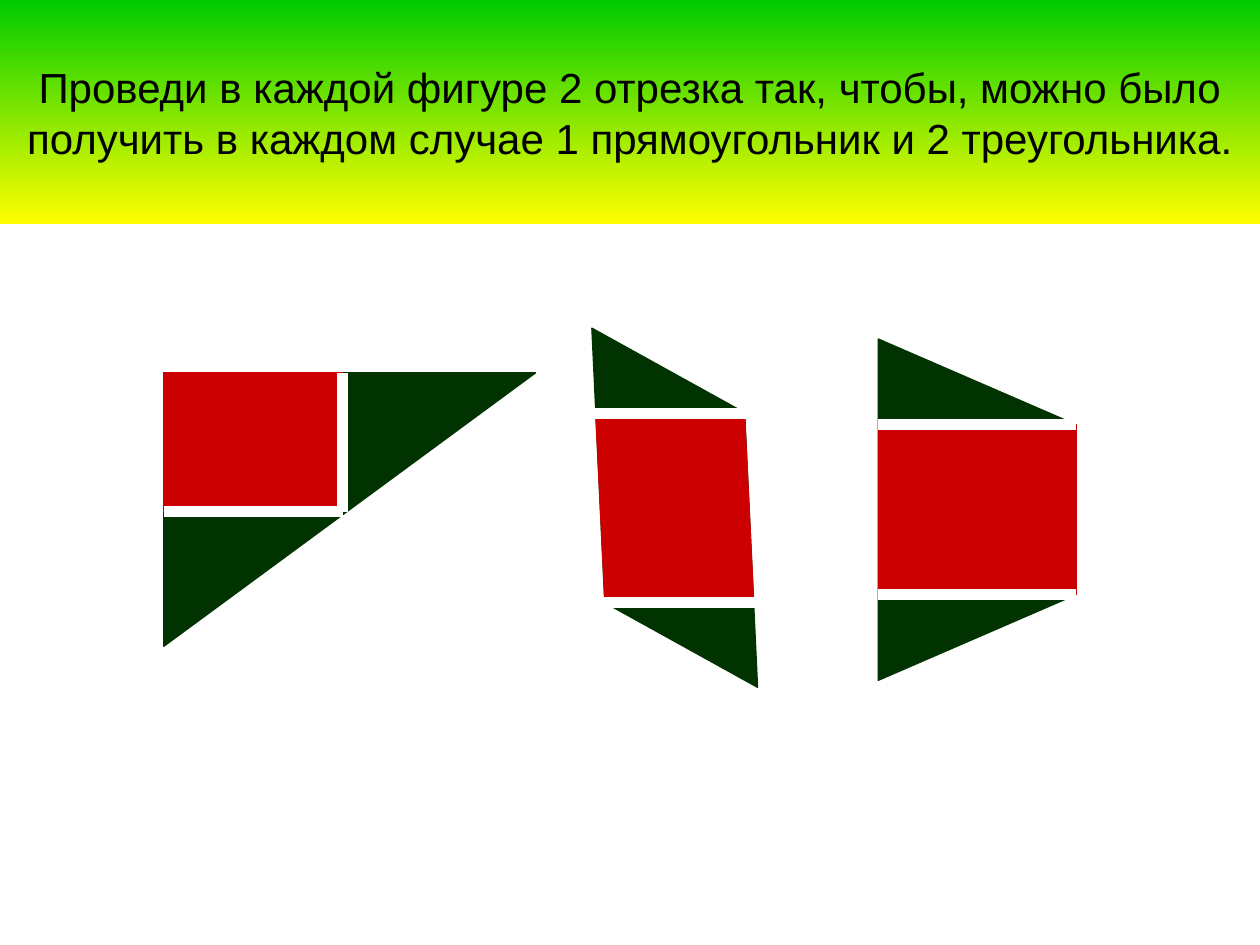
import pptx
import pptx.dml.color
import pptx.enum.shapes
import pptx.enum.text
import pptx.oxml
import pptx.oxml.ns
import pptx.util

Inches = pptx.util.Inches
Pt = pptx.util.Pt
RGBColor = pptx.dml.color.RGBColor
MSO_SHAPE = pptx.enum.shapes.MSO_SHAPE

GREEN = RGBColor(0x00, 0x33, 0x00)
RED = RGBColor(0xCC, 0x00, 0x00)
WHITE = RGBColor(0xFF, 0xFF, 0xFF)
BLACK = RGBColor(0x00, 0x00, 0x00)
BAND_TOP = RGBColor(0x00, 0xCC, 0x00)
BAND_BOTTOM = RGBColor(0xFF, 0xFF, 0x00)

TASK = ("Проведи в каждой фигуре 2 отрезка так, чтобы, можно было "
        "получить в каждом случае 1 прямоугольник и 2 треугольника.")


def paint(shape, color):
    shape.shadow.inherit = False
    shape.fill.solid()
    shape.fill.fore_color.rgb = color
    shape.line.color.rgb = color
    shape.line.width = Pt(0.75)


def add_figure(slide, preset, center, size, color, rotation=0):
    """Add a preset shape around its centre, sized as before rotation."""
    (x, y), (width, height) = center, size
    shape = slide.shapes.add_shape(
        preset, Inches(x - width / 2), Inches(y - height / 2),
        Inches(width), Inches(height))
    shape.rotation = rotation
    paint(shape, color)
    return shape


def add_cut(slide, start, end):
    """Draw the white segment that divides a figure."""
    cut = slide.shapes.add_connector(
        pptx.enum.shapes.MSO_CONNECTOR.STRAIGHT,
        *(Inches(value) for value in (*start, *end)))
    cut.line.color.rgb = WHITE
    cut.line.width = Pt(6)
    cut._element.spPr.append(pptx.oxml.parse_xml(
        "<a:effectLst %s/>" % pptx.oxml.ns.nsdecls("a")))


def add_title_band(slide, left, top, width, height):
    title = slide.shapes.title
    title.left, title.top = Inches(left), Inches(top)
    title.width, title.height = Inches(width), Inches(height)
    title.fill.gradient()
    title.fill.gradient_angle = 270
    for stop, color, position in zip(
            title.fill.gradient_stops, (BAND_TOP, BAND_BOTTOM), (0, 1)):
        stop.color.rgb = color
        stop.position = position
    frame = title.text_frame
    frame.text = TASK
    frame.word_wrap = True
    frame.auto_size = pptx.enum.text.MSO_AUTO_SIZE.NONE
    frame.vertical_anchor = pptx.enum.text.MSO_ANCHOR.MIDDLE
    paragraph = frame.paragraphs[0]
    paragraph.alignment = pptx.enum.text.PP_ALIGN.CENTER
    paragraph.font.name = "Arial"
    paragraph.font.size = Pt(24)
    paragraph.font.color.rgb = BLACK


def add_right_triangle(slide, left, top, width, height):
    inner_width, inner_height = 1.42, 1.1
    right, bottom = left + inner_width, top + inner_height
    add_figure(slide, MSO_SHAPE.RIGHT_TRIANGLE,
               (left + width / 2, top + height / 2), (height, width),
               GREEN, 90)
    add_figure(slide, MSO_SHAPE.RECTANGLE,
               (left + inner_width / 2, top + inner_height / 2),
               (inner_width, inner_height), RED)
    add_cut(slide, (left, bottom), (right, bottom))
    add_cut(slide, (right, top), (right, bottom))


def add_parallelogram(slide, left, top, width, height):
    center = (left + width / 2, top + height / 2)
    right, bottom = left + width, top + height
    shift, margin = 0.08, 0.69
    outline = add_figure(slide, MSO_SHAPE.PARALLELOGRAM, center,
                         (2.91, 1.18), GREEN, 87.3)
    outline.adjustments[0] = 0.617
    add_figure(slide, MSO_SHAPE.RECTANGLE, center, (1.18, 1.5), RED, 357.2)
    add_cut(slide, (left, top + margin), (right - shift, top + margin))
    add_cut(slide, (right, bottom - margin), (left + shift, bottom - margin))


def add_trapezoid(slide, left, top, width, height):
    right, bottom = left + width, top + height
    shoulder = 0.68
    upper, lower = top + shoulder, bottom - shoulder
    corners = [(left, bottom), (right, lower), (right, upper), (left, top)]
    points = [(Inches(x), Inches(y)) for x, y in corners]
    builder = slide.shapes.build_freeform(*points[0])
    builder.add_line_segments(points[1:], close=True)
    paint(builder.convert_to_shape(), GREEN)
    add_figure(slide, MSO_SHAPE.RECTANGLE,
               (left + width / 2, top + height / 2),
               (width, lower - upper), RED)
    for y in (upper, lower):
        add_cut(slide, (left, y), (right, y))


def main():
    presentation = pptx.Presentation()
    presentation.slide_width = Inches(10)
    presentation.slide_height = Inches(7.5)
    slide = presentation.slides.add_slide(presentation.slide_layouts[5])
    add_title_band(slide, 0, 0, 10, 1.78)
    add_right_triangle(slide, 1.3, 2.96, 2.95, 2.17)
    add_parallelogram(slide, 4.69, 2.59, 1.33, 2.88)
    add_trapezoid(slide, 6.97, 2.69, 1.57, 2.71)
    presentation.save("out.pptx")


if __name__ == "__main__":
    main()
